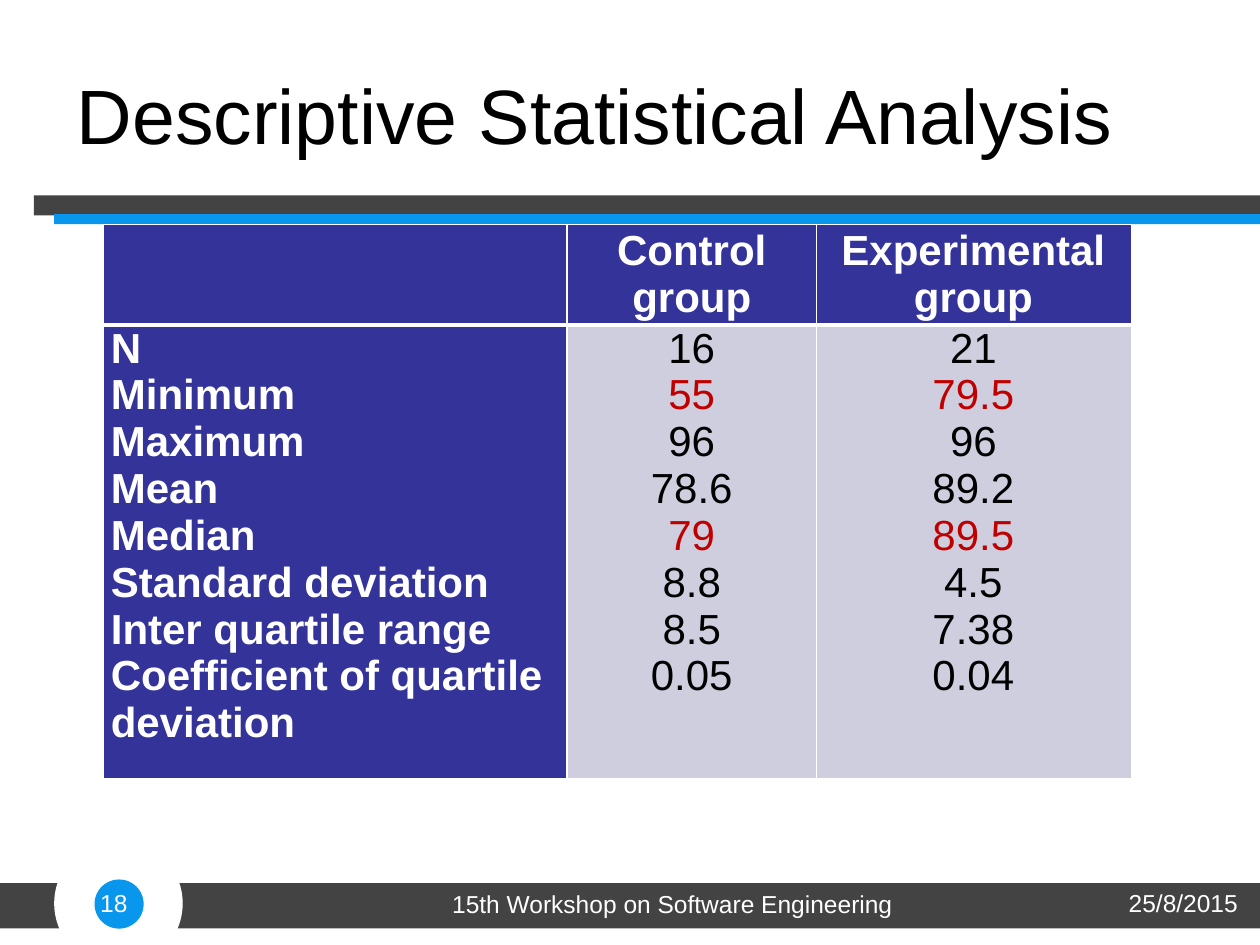
from lxml.etree import SubElement
from pptx import Presentation
from pptx.dml.color import RGBColor
from pptx.enum.shapes import MSO_SHAPE
from pptx.enum.text import MSO_ANCHOR, PP_ALIGN
from pptx.oxml.ns import qn
from pptx.util import Pt

PX = 9144  # 100 px to the inch
FONT = "Arial"
BLACK = RGBColor(0, 0, 0)
WHITE = RGBColor(0xFF, 0xFF, 0xFF)
GRAY = RGBColor(0x43, 0x43, 0x43)
BLUE = RGBColor(0x09, 0x96, 0xED)
NAVY = RGBColor(0x33, 0x33, 0x99)
PALE = RGBColor(0xCE, 0xCE, 0xDE)
RED = RGBColor(0xC0, 0, 0)

HEADS = ["", "Control group", "Experimental group"]
STATS = [
    ("N", "16", "21"),
    ("Minimum", "55", "79.5"),
    ("Maximum", "96", "96"),
    ("Mean", "78.6", "89.2"),
    ("Median", "79", "89.5"),
    ("Standard deviation", "8.8", "4.5"),
    ("Inter quartile range", "8.5", "7.38"),
    ("Coefficient of quartile deviation", "0.05", "0.04"),
]
MARKED = {"Minimum", "Median"}
WIDTHS = [368, 198, 250]
HEIGHTS = [40, 246]
INSETS = [(2, 2), (2, 2), (6, 7)]


def scale(*sizes):
    return [size * PX for size in sizes]


def assign(target, values):
    for name, value in values.items():
        setattr(target, name, value)


def write(par, text, size, color, align=PP_ALIGN.LEFT, bold=False):
    par.alignment = align
    run = par.add_run()
    run.text = text
    assign(run.font, {"name": FONT, "size": Pt(size), "bold": bold})
    run.font.color.rgb = color


def block(slide, kind, box, color):
    shape = slide.shapes.add_shape(kind, *scale(*box))
    shape.shadow.inherit = False
    shape.fill.solid()
    shape.fill.fore_color.rgb = color
    shape.line.fill.background()


def label(slide, box, text, align):
    frame = slide.shapes.add_textbox(*scale(*box)).text_frame
    frame.word_wrap = True
    write(frame.paragraphs[0], text, 14, WHITE, align)


def title(slide, box, text):
    shape = slide.shapes.title
    assign(shape, dict(zip(("left", "top", "width", "height"), scale(*box))))
    frame = shape.text_frame
    assign(frame, {"word_wrap": True, "vertical_anchor": MSO_ANCHOR.MIDDLE})
    write(frame.paragraphs[0], text, 44, BLACK)


def rules(slide, left, top, right):
    block(slide, MSO_SHAPE.RECTANGLE, (left, top, right - left, 16), GRAY)
    block(slide, MSO_SHAPE.RECTANGLE,
          (left + 16, top + 15, right - left - 16, 8), BLUE)


def footer(slide, top, right):
    for left, end in ((138, right), (0, 51)):
        block(slide, MSO_SHAPE.RECTANGLE, (left, top, end - left, 36), GRAY)
    block(slide, MSO_SHAPE.OVAL, (43, top - 35, 102, 102), WHITE)
    block(slide, MSO_SHAPE.OVAL, (75, top - 3, 39, 39), BLUE)
    label(slide, (right - 114, top - 1, 114, 52), "25/8/2015", PP_ALIGN.LEFT)
    label(slide, (335, top, 403, 52),
          "15th Workshop on Software Engineering ", PP_ALIGN.CENTER)
    label(slide, (46, top - 1, 65, 47), "18", PP_ALIGN.RIGHT)


def border(cell, widths):
    """Add white edges; the schema wants them ahead of the fill."""
    props = cell._tc.get_or_add_tcPr()
    for spot, (side, width) in enumerate(zip("LRTB", widths)):
        line = SubElement(props, qn(f"a:ln{side}"), w=str(Pt(width)))
        fill = SubElement(line, qn("a:solidFill"))
        SubElement(fill, qn("a:srgbClr"), val=str(WHITE))
        props.insert(spot, line)


def style(cell, color, insets, widths):
    left, right = scale(*insets)
    assign(cell, {"margin_left": left, "margin_right": right,
                  "margin_top": 0, "margin_bottom": 0})
    cell.fill.solid()
    cell.fill.fore_color.rgb = color
    border(cell, widths)


def stats(slide, box):
    grid = slide.shapes.add_table(2, len(HEADS), *scale(*box)).table
    for row, size in zip(grid.rows, HEIGHTS):
        row.height = size * PX
    for col, head in enumerate(HEADS):
        grid.columns[col].width = WIDTHS[col] * PX
        top, body = grid.cell(0, col), grid.cell(1, col)
        names = col == 0
        style(top, NAVY, INSETS[col], (1, 1, 1, 3))
        style(body, NAVY if names else PALE,
              (6, 2) if names else INSETS[col], (1, 1, 3, 1))
        top.vertical_anchor = MSO_ANCHOR.MIDDLE
        if head:
            write(top.text_frame.paragraphs[0], head, 24, WHITE,
                  PP_ALIGN.CENTER, True)
        frame = body.text_frame
        for num, stat in enumerate(STATS):
            par = frame.add_paragraph() if num else frame.paragraphs[0]
            if names:
                write(par, stat[0], 24, WHITE, bold=True)
            else:
                color = RED if stat[0] in MARKED else BLACK
                write(par, stat[col], 24, color, PP_ALIGN.CENTER)


def main():
    deck = Presentation()
    deck.slide_width, deck.slide_height = scale(1000, 750)
    slide = deck.slides.add_slide(deck.slide_layouts[5])
    footer(slide, 701, 1000)
    rules(slide, 27, 155, 1000)
    title(slide, (51, 28, 874, 125), "Descriptive Statistical Analysis")
    stats(slide, (82, 178, 816, 440))
    deck.save("out.pptx")


if __name__ == "__main__":
    main()
